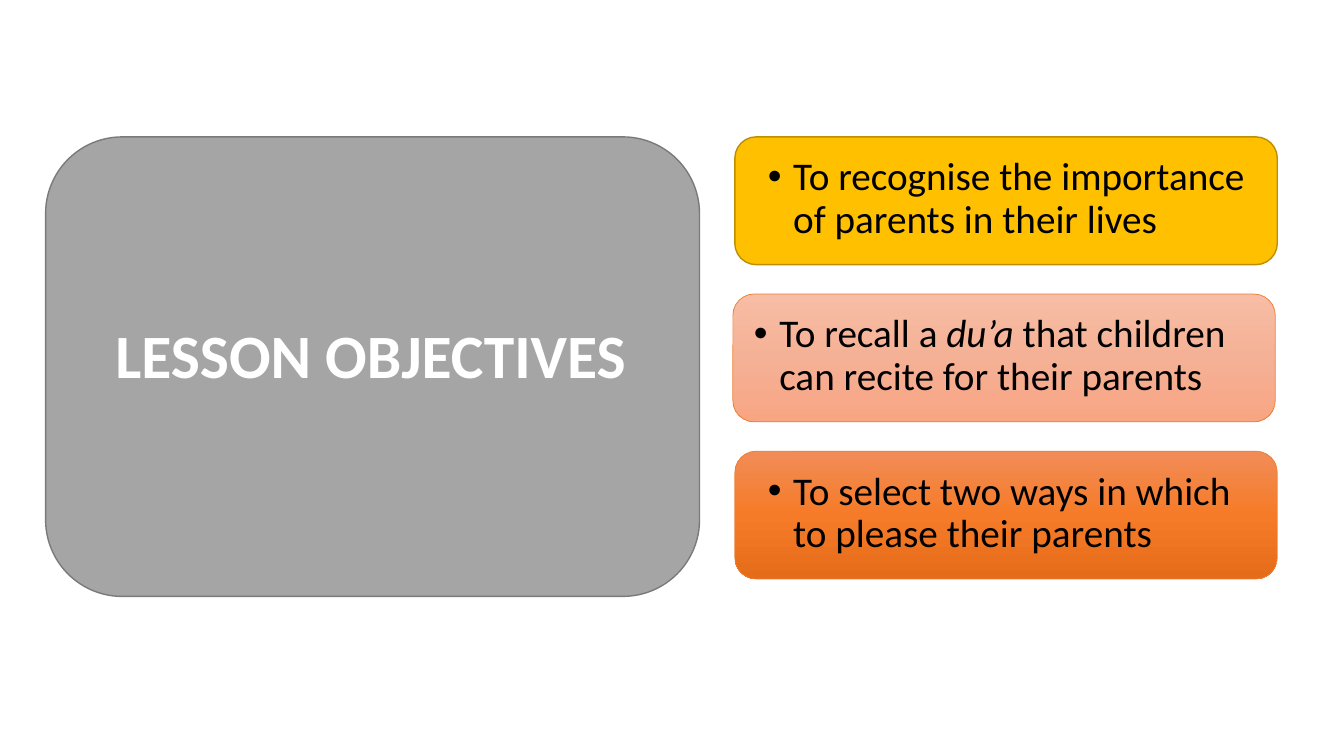
from copy import deepcopy

from lxml import etree
from pptx import Presentation
from pptx.dml.color import RGBColor
from pptx.enum.shapes import MSO_SHAPE
from pptx.enum.text import MSO_ANCHOR, PP_ALIGN
from pptx.oxml.ns import qn
from pptx.util import Cm, Pt

ROUNDED = MSO_SHAPE.ROUNDED_RECTANGLE
MIDDLE = MSO_ANCHOR.MIDDLE
CENTER = PP_ALIGN.CENTER
TITLE_ONLY = 5

HEADING_FONT = {"name": "Calibri", "size": Pt(44), "bold": True}
OBJECTIVE_FONT = {"name": "Calibri", "size": Pt(28)}

PANEL_TOP = 3.45
CARD_PITCH = 3.96
CARD_SIZE = (13.67, 3.22)
TEXT_DROP = 0.38
BULLET_INDENT = 0.64

# Each run is (text, italic); text boxes are (left, width, height) in cm.
OBJECTIVES = [
    {"runs": [("To recognise the importance of parents in their lives", False)],
     "card_left": 18.52, "text_box": (19.1, 13.08, 2.49),
     "fill": ["FFC000"], "line": ("BD8E00", 1)},
    {"runs": [("To recall a ", False), ("du’a ", True),
              ("that children can recite for their parents", False)],
     "card_left": 18.47, "text_box": (18.75, 13.08, 3.58),
     "fill": ["F7BDA5", "F5B196", "F8A582"], "line": ("ED7D31", 0.5)},
    {"runs": [("To select two ways in which to please their parents", False)],
     "card_left": 18.52, "text_box": (19.1, 12.37, 2.69),
     "fill": ["F18C57", "F67B28", "E56C19"], "line": ("ED7D31", 0.5)},
]


def rgb(value):
    return RGBColor.from_string(value)


def set_font(font, settings, color):
    for name, value in settings.items():
        setattr(font, name, value)
    font.color.rgb = rgb(color)


def fill_downwards(card, colors):
    """Fill with three evenly spaced colours running from top to bottom."""
    card.fill.gradient()
    card.fill.gradient_angle = 270
    stop_list = card._element.spPr.find(".//" + qn("a:gsLst"))
    stop_list.append(deepcopy(stop_list[0]))
    for index, (stop, color) in enumerate(zip(card.fill.gradient_stops, colors)):
        stop.position = index / (len(colors) - 1)
        stop.color.rgb = rgb(color)


def add_card(slide, left, top, width, height, colors, line):
    card = slide.shapes.add_shape(ROUNDED, Cm(left), Cm(top), Cm(width), Cm(height))
    card.shadow.inherit = False
    if len(colors) == 1:
        card.fill.solid()
        card.fill.fore_color.rgb = rgb(colors[0])
    else:
        fill_downwards(card, colors)
    line_color, line_width = line
    card.line.color.rgb = rgb(line_color)
    card.line.width = Pt(line_width)


def add_bullet(paragraph):
    properties = paragraph._p.get_or_add_pPr()
    properties.set("marL", str(Cm(BULLET_INDENT)))
    properties.set("indent", str(-Cm(BULLET_INDENT)))
    etree.SubElement(properties, qn("a:buFont"), typeface="Arial")
    etree.SubElement(properties, qn("a:buChar"), char="•")


def add_objective_text(slide, left, top, width, height, runs):
    box = slide.shapes.add_textbox(Cm(left), Cm(top), Cm(width), Cm(height))
    box.text_frame.word_wrap = True
    paragraph = box.text_frame.paragraphs[0]
    add_bullet(paragraph)
    paragraph.line_spacing = 0.9
    for text, italic in runs:
        run = paragraph.add_run()
        run.text = text
        set_font(run.font, {**OBJECTIVE_FONT, "italic": italic}, "000000")


def place_heading(slide, text):
    """Set the title and bring it in front of its panel."""
    heading = slide.shapes.title
    heading.left, heading.top = Cm(1.75), Cm(6.96)
    heading.width, heading.height = Cm(15.19), Cm(4.14)
    heading.text_frame.text = text
    heading.text_frame.word_wrap = True
    heading.text_frame.vertical_anchor = MIDDLE
    paragraph = heading.text_frame.paragraphs[0]
    paragraph.alignment = CENTER
    paragraph.line_spacing = 0.9
    set_font(paragraph.runs[0].font, HEADING_FONT, "FFFFFF")
    slide.shapes._spTree.append(heading._element)


def main():
    presentation = Presentation()
    presentation.slide_width, presentation.slide_height = Cm(33.87), Cm(19.05)
    slide = presentation.slides.add_slide(presentation.slide_layouts[TITLE_ONLY])

    add_card(slide, 1.15, PANEL_TOP, 16.48, 11.58, ["A5A5A5"], ("7A7A7A", 1))
    place_heading(slide, "LESSON OBJECTIVES")

    for row, objective in enumerate(OBJECTIVES):
        top = PANEL_TOP + row * CARD_PITCH
        add_card(slide, objective["card_left"], top, *CARD_SIZE,
                 objective["fill"], objective["line"])
        left, width, height = objective["text_box"]
        add_objective_text(slide, left, top + TEXT_DROP, width, height,
                           objective["runs"])

    presentation.save("out.pptx")


if __name__ == "__main__":
    main()
